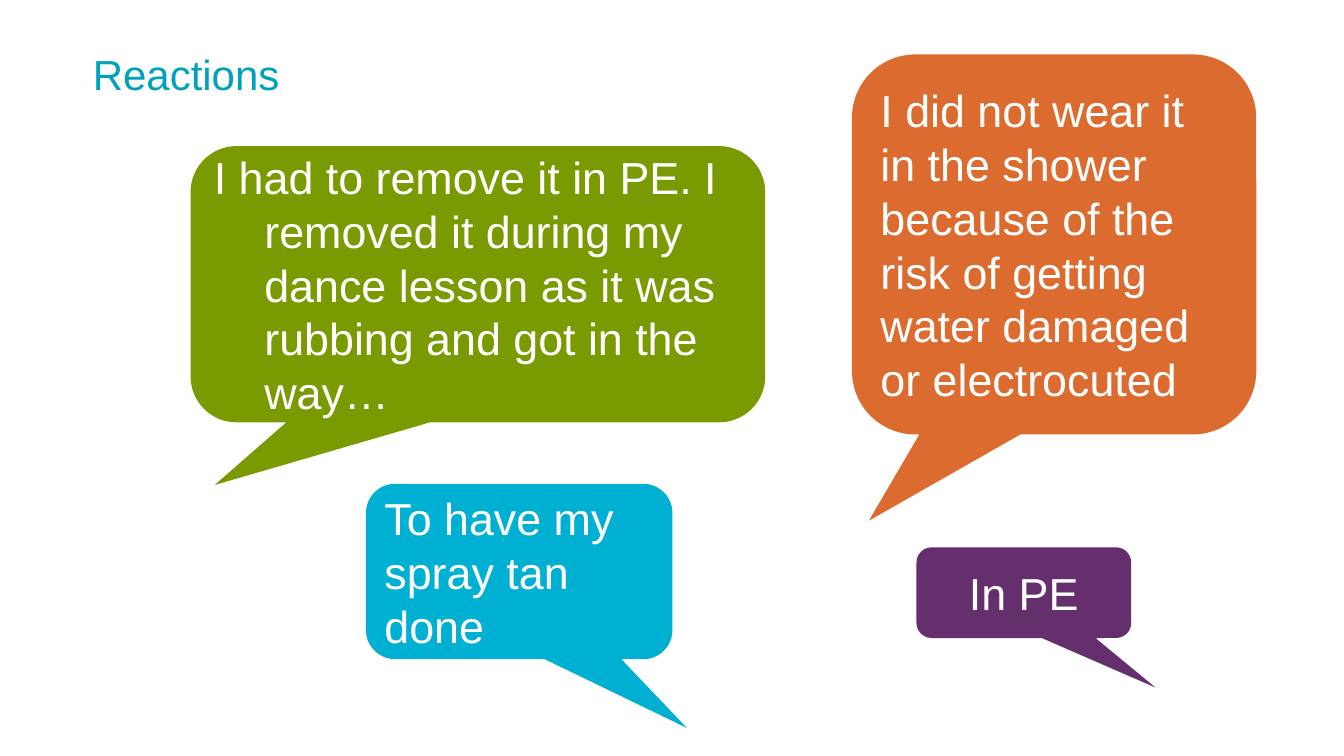
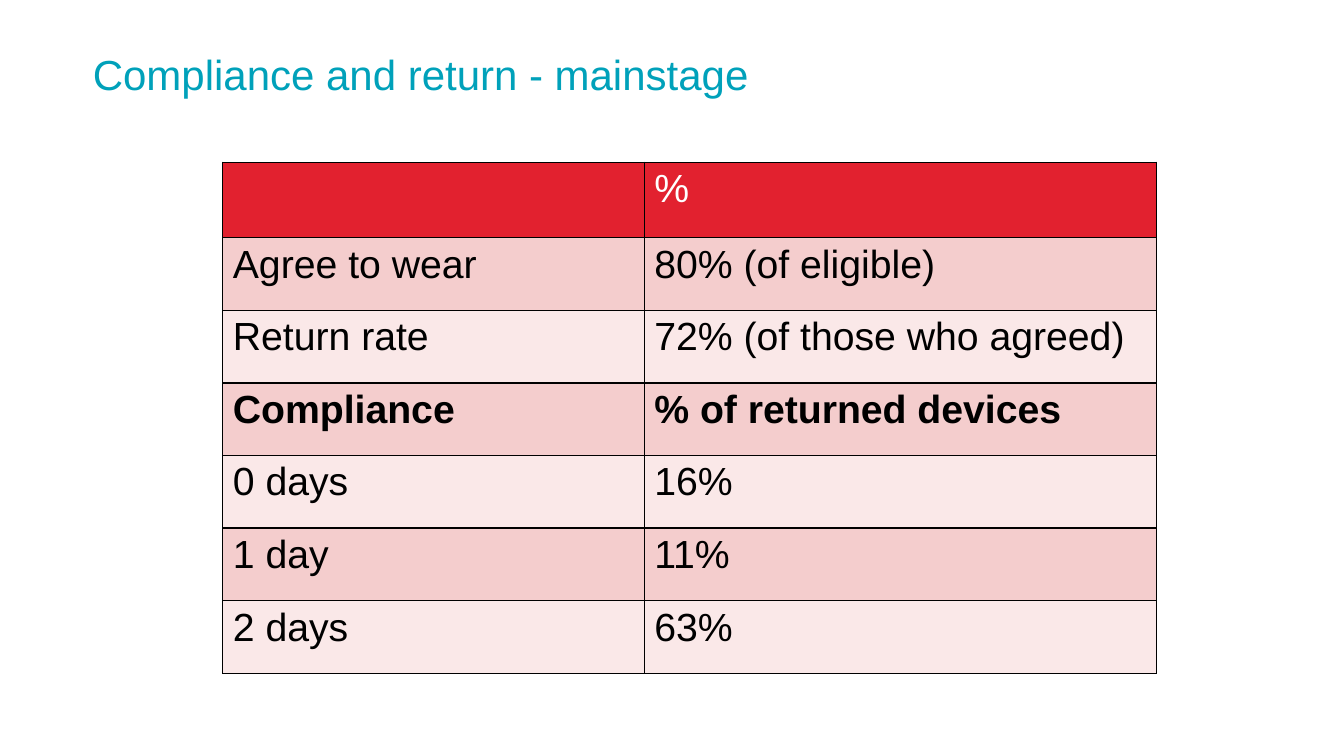
from lxml.etree import SubElement
from pptx import Presentation
from pptx.dml.color import RGBColor
from pptx.enum.shapes import MSO_SHAPE as Shape
from pptx.enum.text import MSO_ANCHOR as Anchor, MSO_AUTO_SIZE as AutoSize, PP_ALIGN as Align
from pptx.oxml.ns import qn
from pptx.util import Inches, Pt

TEAL = RGBColor(0x00, 0xA1, 0xBA)
GREEN = RGBColor(0x7A, 0x9A, 0x01)
ORANGE = RGBColor(0xDC, 0x6B, 0x2F)
CYAN = RGBColor(0x00, 0xB0, 0xD2)
PURPLE = RGBColor(0x64, 0x2F, 0x6C)
RED = RGBColor(0xE2, 0x21, 0x2F)
ROSE = RGBColor(0xF4, 0xCD, 0xCD)
BLUSH = RGBColor(0xFA, 0xE8, 0xE8)
WHITE = RGBColor(0xFF, 0xFF, 0xFF)
BLACK = RGBColor(0x00, 0x00, 0x00)


class SlideBuilder:
    """Holds the shared style and the current slide."""

    font_name = "Arial"
    title_format = {"size": Pt(30), "color": TEAL}
    callout_format = {"size": Pt(32), "color": WHITE}
    cell_format = {"size": Pt(28), "color": BLACK, "bold": False}

    def __init__(self):
        self.deck = Presentation()
        self.deck.slide_width = Inches(13.33)
        self.deck.slide_height = Inches(7.5)
        self.page = None

    def add_text(self, para, text, formats):
        span = para.add_run()
        span.text = text
        span.font.name = self.font_name
        for name, value in formats.items():
            if name == "color":
                span.font.color.rgb = value
            else:
                setattr(span.font, name, value)

    def add_page(self, title):
        self.page = self.deck.slides.add_slide(self.deck.slide_layouts[5])
        box = self.page.shapes.title
        box.left, box.top = Inches(0.92), Inches(0.54)
        box.width, box.height = Inches(11.5), Inches(0.87)
        frame = box.text_frame
        frame_format = {"margin_left": 0, "margin_right": 0, "margin_top": 0,
                        "margin_bottom": 0, "word_wrap": True,
                        "vertical_anchor": Anchor.TOP, "auto_size": AutoSize.NONE}
        for name, value in frame_format.items():
            setattr(frame, name, value)
        para = frame.paragraphs[0]
        para.alignment, para.line_spacing = Align.LEFT, 0.9
        self.add_text(para, title, self.title_format)

    def add_callout(self, text, place, tip, color, align=Align.LEFT, hanging=0):
        box = self.page.shapes.add_shape(Shape.ROUNDED_RECTANGULAR_CALLOUT, *map(Inches, place))
        box.shadow.inherit = False
        box.fill.solid()
        box.fill.fore_color.rgb = color
        box.line.fill.background()
        box.adjustments[0], box.adjustments[1] = tip
        frame = box.text_frame
        frame.word_wrap, frame.vertical_anchor = True, Anchor.MIDDLE
        para = frame.paragraphs[0]
        para.alignment = align
        if hanging:
            properties = para._p.get_or_add_pPr()
            properties.set("marL", str(Inches(hanging)))
            properties.set("indent", str(-Inches(hanging)))
        self.add_text(para, text, self.callout_format)

    def add_table(self, rows, place, widths, heights):
        frame = self.page.shapes.add_table(len(rows), len(widths), *map(Inches, place))
        table = frame.table
        table.first_row = table.horz_banding = False
        for column, width in zip(table.columns, widths):
            column.width = Inches(width)
        for index, (row, height) in enumerate(zip(rows, heights)):
            table.rows[index].height = Inches(height)
            fill = RED if index == 0 else (BLUSH, ROSE)[index % 2]
            formats = {**self.cell_format, "color": BLACK if index else WHITE,
                       "bold": row[0] == "Compliance"}
            for cell, text in zip(table.rows[index].cells, row):
                self.add_borders(cell)
                cell.fill.solid()
                cell.fill.fore_color.rgb = fill
                if text:
                    self.add_text(cell.text_frame.paragraphs[0], text, formats)

    def add_borders(self, cell):
        properties = cell._tc.get_or_add_tcPr()
        for side in ("a:lnL", "a:lnR", "a:lnT", "a:lnB"):
            line = SubElement(properties, qn(side), w=str(Pt(1)))
            SubElement(SubElement(line, qn("a:solidFill")), qn("a:srgbClr"), val=str(BLACK))


def main():
    builder = SlideBuilder()

    # Speech bubbles
    builder.add_page("Reactions")
    left_tip = (-0.458, 0.727)
    builder.add_callout(
        "I had to remove it in PE. I removed it during my dance lesson "
        "as it was rubbing and got in the way…",
        (1.89, 1.45, 5.7, 2.74), left_tip, GREEN, hanging=0.5)
    builder.add_callout(
        "I did not wear it in the shower because of the risk of getting "
        "water damaged or electrocuted",
        (8.45, 0.54, 4.01, 3.77), left_tip, ORANGE)
    builder.add_callout("To have my spray tan done", (3.63, 4.8, 3.04, 1.74), (0.547, 0.892), CYAN)
    builder.add_callout("In PE", (9.09, 5.43, 2.13, 0.9), (0.613, 1.046), PURPLE, Align.CENTER)

    # Compliance table
    builder.add_page("Compliance and return - mainstage")
    rows = [
        ("", "%"),
        ("Agree to wear", "80% (of eligible)"),
        ("Return rate", "72% (of those who agreed)"),
        ("Compliance", "% of returned devices"),
        ("0 days", "16%"),
        ("1 day", "11%"),
        ("2 days", "63%"),
    ]
    builder.add_table(rows, (2.21, 1.61, 9.26, 5.09), (4.18, 5.08), [0.75] + [0.72] * 6)

    builder.deck.save("out.pptx")


if __name__ == "__main__":
    main()
